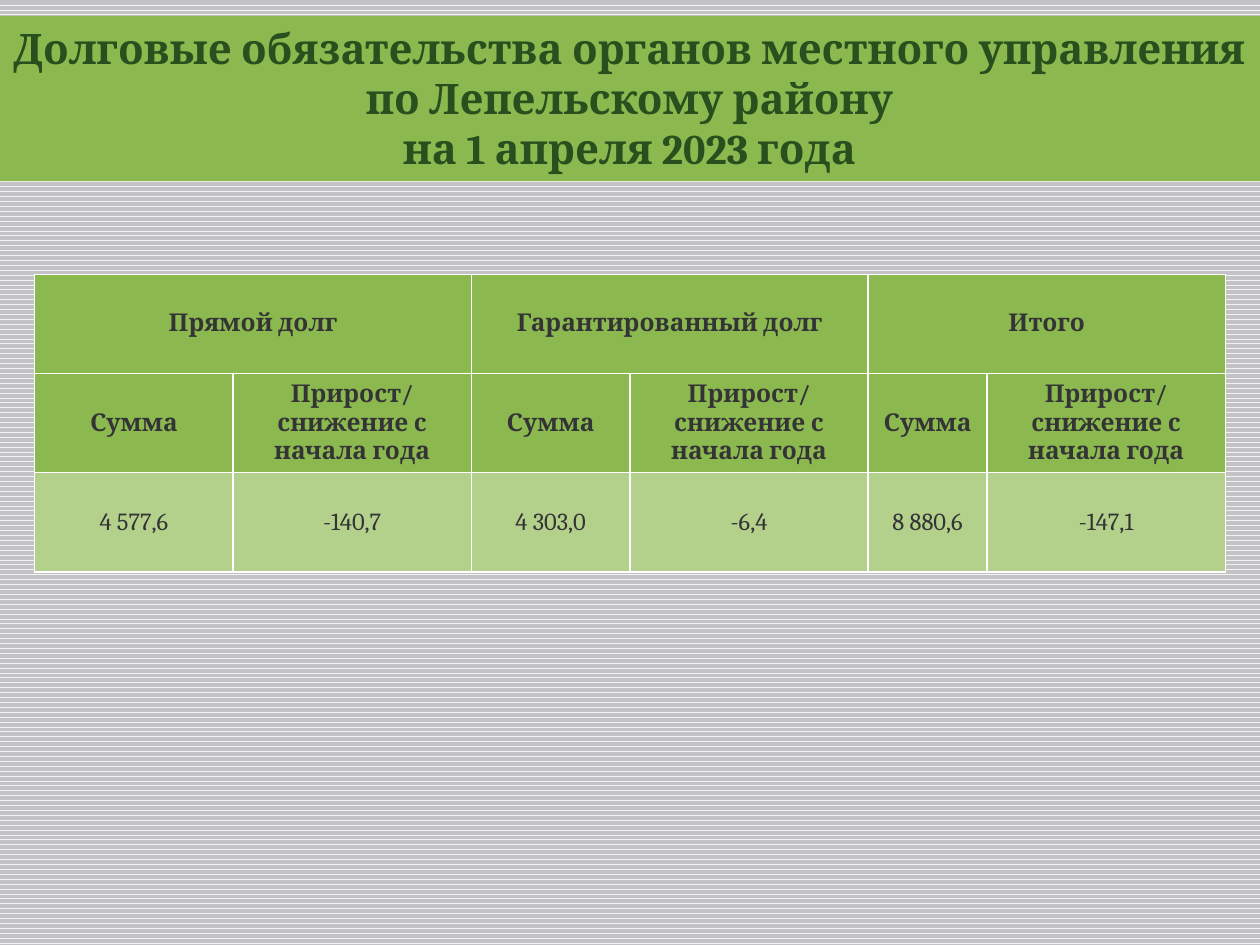
from lxml.etree import SubElement
from pptx import Presentation
from pptx.dml.color import RGBColor
from pptx.enum.dml import MSO_PATTERN
from pptx.enum.text import MSO_ANCHOR, MSO_AUTO_SIZE, PP_ALIGN
from pptx.oxml.ns import qn
from pptx.util import Cm, Pt

TITLE = [
    "Долговые обязательства органов местного управления",
    "по Лепельскому району",
    "на 1 апреля 2023 года",
]
DEBTS = [
    ("Прямой долг", 4, "4 577,6", "-140,7"),
    ("Гарантированный долг", 3.2, "4 303,0", "-6,4"),
    ("Итого", 2.4, "8 880,6", "-147,1"),
]
SUBHEADS = ("Сумма", "Прирост/снижение с начала года")
CHANGE_WIDTH = 4.8
ROW_HEIGHT = 2
COLORS = {
    "stripe": "F2F2F2",
    "back": "C3C2C5",
    "header": "8CB94F",
    "value": "B3D18B",
    "title": "284F1D",
    "text": "343436",
    "border": "FFFFFF",
}
FONT = "Cambria"


def color(name):
    return RGBColor.from_string(COLORS[name])


def paint(fill, name):
    fill.solid()
    fill.fore_color.rgb = color(name)


def write(para, text, size, ink, bold):
    para.alignment = PP_ALIGN.CENTER
    span = para.add_run()
    span.text = text
    span.font.name = FONT
    span.font.size = Pt(size)
    span.font.bold = bold
    span.font.color.rgb = color(ink)


def add_borders(cell):
    properties = cell._tc.get_or_add_tcPr()
    for side in ("a:lnL", "a:lnR", "a:lnT", "a:lnB"):
        line = SubElement(properties, qn(side), w=str(Pt(1)))
        fill = SubElement(line, qn("a:solidFill"))
        SubElement(fill, qn("a:srgbClr"), val=COLORS["border"])


def fill_title(box):
    box.left, box.top, box.width, box.height = Cm(-0.02), Cm(0.32), Cm(25.42), Cm(3.33)
    paint(box.fill, "header")
    frame = box.text_frame
    frame.word_wrap = True
    frame.auto_size = MSO_AUTO_SIZE.NONE
    frame.vertical_anchor = MSO_ANCHOR.TOP
    for index, text in enumerate(TITLE):
        para = frame.add_paragraph() if index else frame.paragraphs[0]
        write(para, text, 24, "title", True)


def add_debt_table(page):
    widths = [width for _, amount, *_ in DEBTS for width in (amount, CHANGE_WIDTH)]
    rows = [
        [text for name, *_ in DEBTS for text in (name, "")],
        SUBHEADS * len(DEBTS),
        [value for _, _, *values in DEBTS for value in values],
    ]
    table = page.shapes.add_table(
        len(rows), len(widths), Cm(0.7), Cm(5.53),
        Cm(sum(widths)), Cm(ROW_HEIGHT * len(rows)),
    ).table
    for column, width in zip(table.columns, widths):
        column.width = Cm(width)
    for first in range(0, len(widths), 2):
        table.cell(0, first).merge(table.cell(0, first + 1))
    for row_index, texts in enumerate(rows):
        is_header = row_index < 2
        table.rows[row_index].height = Cm(ROW_HEIGHT)
        for column_index, text in enumerate(texts):
            cell = table.cell(row_index, column_index)
            add_borders(cell)
            paint(cell.fill, "header" if is_header else "value")
            cell.vertical_anchor = MSO_ANCHOR.MIDDLE
            if text:
                write(cell.text_frame.paragraphs[0], text, 14, "text", is_header)


def main():
    deck = Presentation()
    deck.slide_width, deck.slide_height = Cm(25.4), Cm(19.05)
    page = deck.slides.add_slide(deck.slide_layouts[5])
    backdrop = page.background.fill
    backdrop.patterned()
    backdrop.pattern = MSO_PATTERN.WAVE
    backdrop.fore_color.rgb = color("stripe")
    backdrop.back_color.rgb = color("back")
    fill_title(page.shapes.title)
    add_debt_table(page)
    deck.save("out.pptx")


if __name__ == "__main__":
    main()
